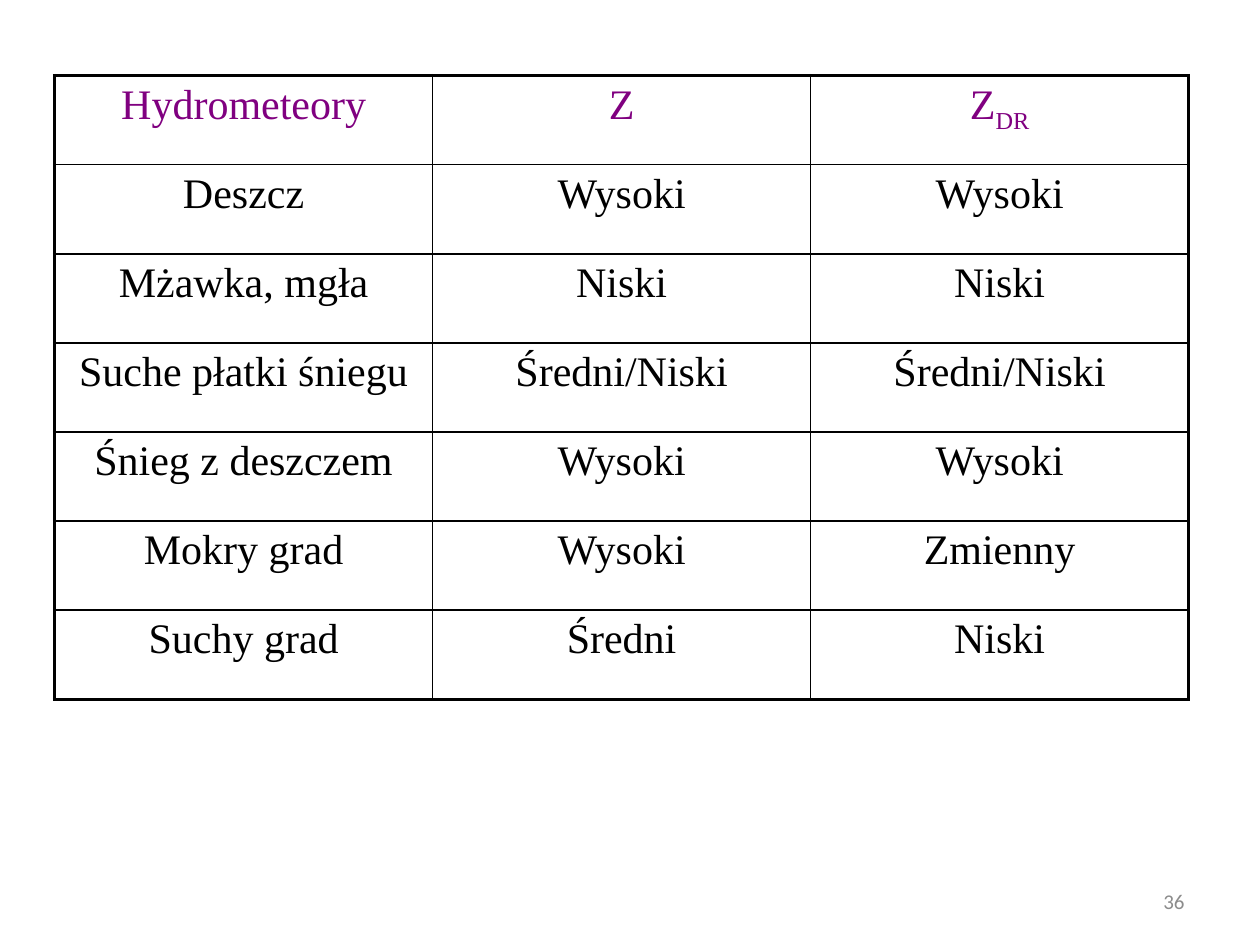
from lxml.etree import SubElement
from pptx import Presentation
from pptx.dml.color import RGBColor
from pptx.enum.text import MSO_ANCHOR as Anchor, PP_ALIGN as Align
from pptx.oxml import parse_xml
from pptx.oxml.ns import nsdecls, qn
from pptx.util import Pt

HEAD = ["Hydrometeory", "Z", ("Z", "DR")]
BODY = [
    ["Deszcz", "Wysoki", "Wysoki"],
    ["Mżawka, mgła", "Niski", "Niski"],
    ["Suche płatki śniegu", "Średni/Niski", "Średni/Niski"],
    ["Śnieg z deszczem", "Wysoki", "Wysoki"],
    ["Mokry grad", "Wysoki", "Zmienny"],
    ["Suchy grad", "Średni", "Niski"],
]
THICK, THIN = 2.25, 1


def color(code):
    return RGBColor.from_string(code)


def write(frame, text, font="Times New Roman", size=24, tint="000000",
          align=Align.CENTER, before=0):
    """Fill a frame; a tuple holds the base text and its subscript."""
    para = frame.paragraphs[0]
    para.alignment = align
    if before:
        gap = SubElement(para._p.get_or_add_pPr(), qn("a:spcBef"))
        SubElement(gap, qn("a:spcPct"), val=str(before * 1000))
    parts = text if isinstance(text, tuple) else (text,)
    for idx, part in enumerate(parts):
        run = para.add_run()
        run.text = part
        run.font.name = font
        run.font.size = Pt(size)
        run.font.color.rgb = color(tint)
        if idx:
            run._r.get_or_add_rPr().set("baseline", "-25000")


class Page:
    ink = "000000"
    accent = "800080"
    muted = "8C8C8C"

    def __init__(self, slide):
        self.slide = slide

    def edge(self, cell, widths):
        """Draw the cell borders, given as left, right, top, bottom."""
        props = cell._tc.get_or_add_tcPr()
        for idx, (side, width) in enumerate(zip("LRTB", widths)):
            props.insert(idx, parse_xml(
                f'<a:ln{side} {nsdecls("a")} w="{Pt(width)}"><a:solidFill>'
                f'<a:srgbClr val="{self.ink}"/></a:solidFill></a:ln{side}>'))

    def table(self, rows, left, top, width, height):
        last_row, last_col = len(rows) - 1, len(rows[0]) - 1
        grid = self.slide.shapes.add_table(
            len(rows), len(rows[0]),
            Pt(left), Pt(top), Pt(width), Pt(height)).table
        grid.first_row = grid.horz_banding = False
        for r, row in enumerate(rows):
            for c, text in enumerate(row):
                cell = grid.cell(r, c)
                cell.fill.background()
                outer = (c == 0, c == last_col, r == 0, r == last_row)
                self.edge(cell, [THICK if out else THIN for out in outer])
                write(cell.text_frame, text, before=20,
                      tint=self.ink if r else self.accent)

    def label(self, text, left, top, width, height, **style):
        box = self.slide.shapes.add_textbox(
            Pt(left), Pt(top), Pt(width), Pt(height))
        frame = box.text_frame
        frame.word_wrap = True
        frame.vertical_anchor = Anchor.MIDDLE
        write(frame, text, **style)


def main():
    deck = Presentation()
    deck.slide_width, deck.slide_height = Pt(720), Pt(540)
    page = Page(deck.slides.add_slide(deck.slide_layouts[6]))

    # Table of radar values
    page.table([HEAD] + BODY, 31.2, 43.2, 648, 356.4)

    # Page number
    page.label("36", 516, 500.5, 168, 28.75, font="Calibri", size=12,
               tint=page.muted, align=Align.RIGHT)

    deck.save("out.pptx")


if __name__ == "__main__":
    main()
